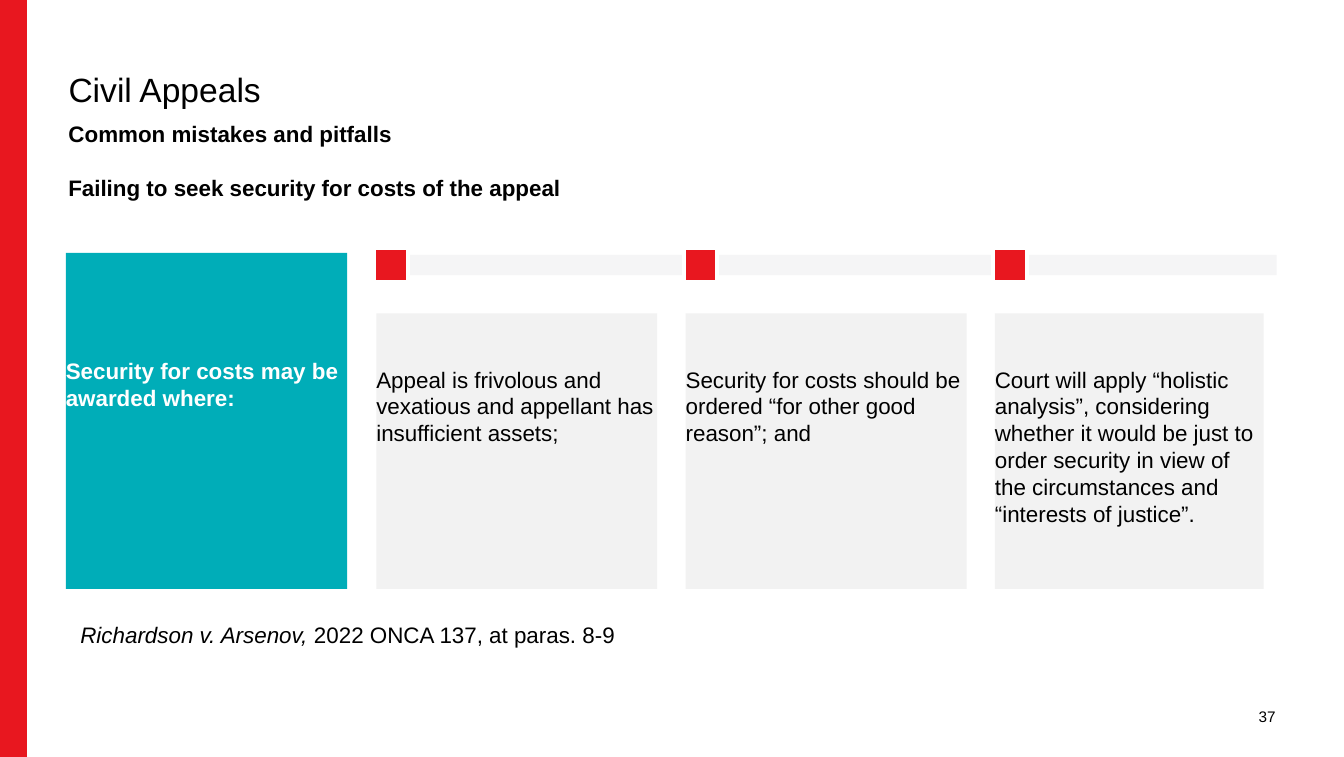
from dataclasses import dataclass

import pptx
import pptx.dml.color
import pptx.enum.shapes
import pptx.enum.text
import pptx.util

Pt = pptx.util.Pt
ALIGN = pptx.enum.text.PP_ALIGN
ANCHOR = pptx.enum.text.MSO_ANCHOR

RED, TEAL, CARD, BAR = "E8171F", "00ADB8", "F2F2F2", "F5F5F6"
BLACK, WHITE = "000000", "FFFFFF"
SLIDE_WIDTH, SLIDE_HEIGHT = 720, 405.36
CARD_LEFT, CARD_STEP = 201.6, 165.7


@dataclass
class Box:
    left: float
    top: float
    width: float
    height: float

    def lengths(self) -> tuple:
        return Pt(self.left), Pt(self.top), Pt(self.width), Pt(self.height)


@dataclass
class Style:
    size: float = 12
    color: str = BLACK
    bold: bool = False
    align: ALIGN = ALIGN.LEFT
    anchor: ANCHOR = ANCHOR.TOP
    insets: tuple = (0, 0, 0, 0)


@dataclass
class Card:
    text: str
    width: float


def rgb(color: str) -> pptx.dml.color.RGBColor:
    return pptx.dml.color.RGBColor.from_string(color)


def write(sp, text: str, style: Style):
    tf = sp.text_frame
    tf.word_wrap = True
    tf.auto_size = pptx.enum.text.MSO_AUTO_SIZE.NONE
    tf.vertical_anchor = style.anchor
    tf.margin_left, tf.margin_top, tf.margin_right, tf.margin_bottom = map(Pt, style.insets)
    p = tf.paragraphs[0]
    p.text = text
    p.alignment = style.align
    p.font.name = "Arial"
    p.font.size = Pt(style.size)
    p.font.bold = style.bold
    p.font.color.rgb = rgb(style.color)
    return p


def add_rect(s, box: Box, fill: str, line: str = ""):
    sp = s.shapes.add_shape(pptx.enum.shapes.MSO_SHAPE.RECTANGLE, *box.lengths())
    sp.shadow.inherit = False
    sp.fill.solid()
    sp.fill.fore_color.rgb = rgb(fill)
    if line:
        sp.line.color.rgb = rgb(line)
        sp.line.width = Pt(2)
    else:
        sp.line.fill.background()
    return sp


def add_text(s, box: Box, text: str, style: Style):
    return write(s.shapes.add_textbox(*box.lengths()), text, style)


def add_title(s, box: Box, text: str, style: Style) -> None:
    sp = s.shapes.title
    sp.left, sp.top, sp.width, sp.height = box.lengths()
    write(sp, text, style)


def main() -> None:
    prs = pptx.Presentation()
    prs.slide_width, prs.slide_height = Pt(SLIDE_WIDTH), Pt(SLIDE_HEIGHT)
    s = prs.slides.add_slide(prs.slide_layouts[5])

    cards = [
        Card("Appeal is frivolous and vexatious and appellant has insufficient assets;", 150.5),
        Card("Security for costs should be ordered “for other good reason”; and", 150.5),
        Card("Court will apply “holistic analysis”, considering whether it would be just to "
             "order security in view of the circumstances and “interests of justice”.", 144),
    ]

    add_rect(s, Box(0, 0, 14.4, SLIDE_HEIGHT), RED)
    add_rect(s, Box(201.6, 136.5, 482.4, 10.8), BAR)

    add_title(s, Box(36, 36, 648, 23), "Civil Appeals", Style(18, insets=(0.72, 1, 0, 0)))
    add_text(s, Box(36, 64.4, 648, 16.6), "Common mistakes and pitfalls",
             Style(bold=True, insets=(0.72, 0, 0, 0)))
    add_text(s, Box(29.5, 89.6, 405.4, 21.6), "Failing to seek security for costs of the appeal",
             Style(bold=True, insets=(7.2, 3.6, 7.2, 3.6)))

    lead = add_rect(s, Box(35.3, 135.4, 150.7, 180), TEAL)
    write(lead, "Security for costs may be awarded where:",
          Style(color=WHITE, bold=True, insets=(0, 56, 0, 0)))

    for i, card in enumerate(cards):
        left = CARD_LEFT + i * CARD_STEP
        add_rect(s, Box(left - 1, 132.8, 18, 18), RED, WHITE)
        sp = add_rect(s, Box(left, 167.8, card.width, 147.6), CARD)
        write(sp, card.text, Style(insets=(0, 28, 0, 0)))

    p = add_text(s, Box(36, 329, 648, 21.6), "Richardson v. Arsenov, ",
                 Style(insets=(7.2, 3.6, 7.2, 3.6)))
    p.runs[0].font.italic = True
    p.add_run().text = "2022 ONCA 137, at paras. 8-9"

    add_text(s, Box(643, 362.2, 40.3, 43), "37",
             Style(8.2, align=ALIGN.RIGHT, anchor=ANCHOR.MIDDLE))

    prs.save("out.pptx")


if __name__ == "__main__":
    main()
